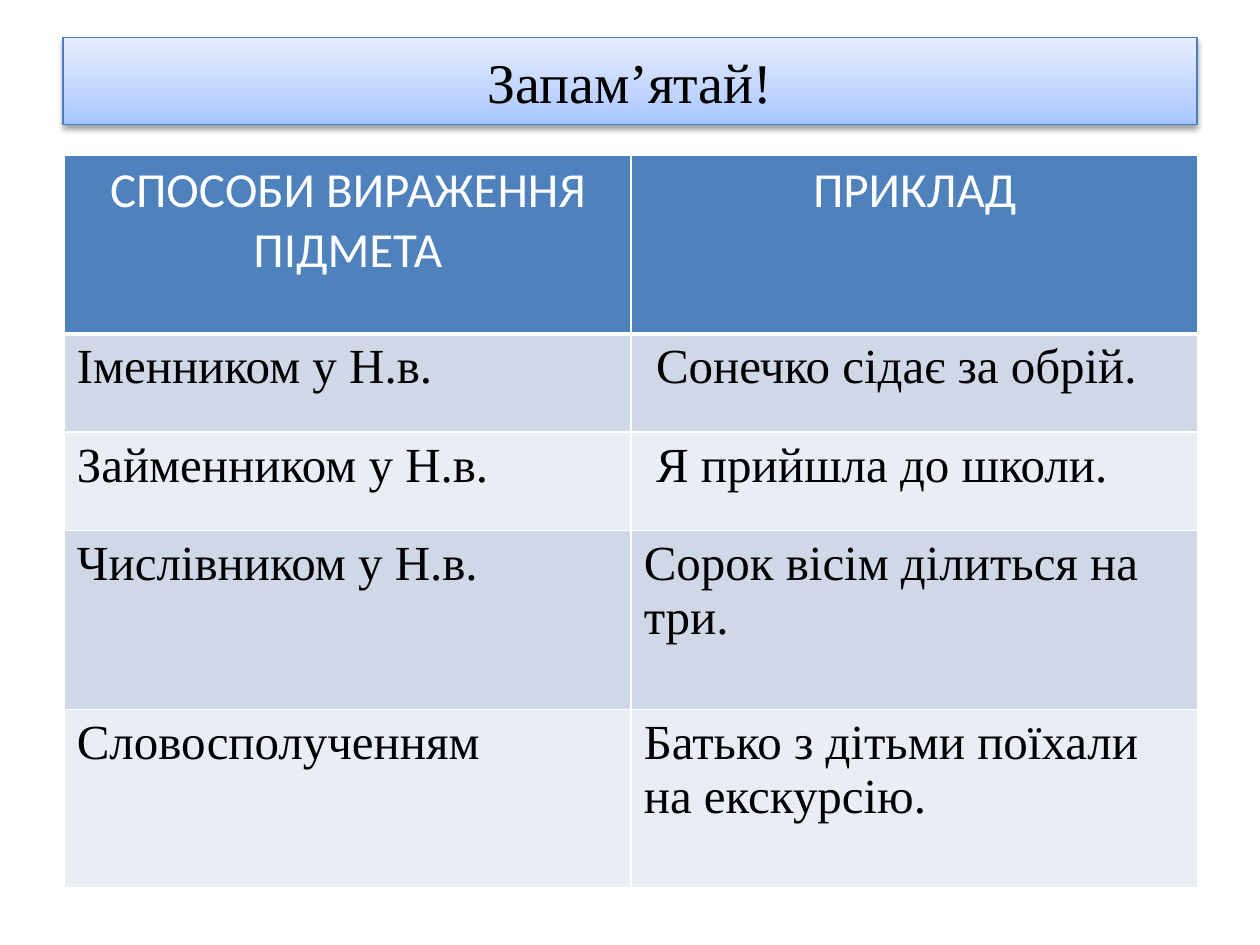
from lxml import etree
from pptx import Presentation
from pptx.dml.color import RGBColor
from pptx.enum import shapes, text
from pptx.oxml.ns import nsdecls, qn
from pptx.util import Inches, Pt

BLACK = RGBColor(0x00, 0x00, 0x00)
WHITE = RGBColor(0xFF, 0xFF, 0xFF)
OUTLINE = RGBColor(0x4B, 0x7E, 0xBC)
HEADER = RGBColor(0x4F, 0x81, 0xBD)
BANDS = RGBColor(0xD0, 0xD8, 0xE8), RGBColor(0xE9, 0xED, 0xF4)
TITLE_STOPS = (
    (0, RGBColor(0xA4, 0xC4, 0xFF)),
    (35, RGBColor(0xBF, 0xD4, 0xFF)),
    (100, RGBColor(0xE6, 0xEE, 0xFF)),
)
SERIF, SANS = "Times New Roman", "Calibri"

ROW_HEIGHTS = 1.42, 0.78, 0.78, 1.42, 1.42
ROWS = (
    ("СПОСОБИ ВИРАЖЕННЯ ПІДМЕТА", "ПРИКЛАД"),
    ("Іменником у Н.в.", " Сонечко сідає за обрій."),
    ("Займенником у Н.в.", " Я прийшла до школи."),
    ("Числівником у Н.в.", "Сорок вісім ділиться на три."),
    ("Словосполученням", "Батько з дітьми поїхали на екскурсію."),
)


def write(tf, content, size, name, color, align):
    p = tf.paragraphs[0]
    p.text = content
    p.alignment = align
    p.font.size = Pt(size)
    p.font.name = name
    p.font.color.rgb = color
    p.font.bold = False


def fill_gradient(sp, stops):
    """Fill a shape from bottom to top with (percent, colour) stops."""
    sp.fill.gradient()
    sp.fill.gradient_angle = 90
    gs_list = sp.element.spPr.find(".//" + qn("a:gsLst"))
    gs_list.clear()
    for percent, color in stops:
        gs = etree.SubElement(gs_list, qn("a:gs"), pos=str(percent * 1000))
        etree.SubElement(gs, qn("a:srgbClr"), val=str(color))


def add_drop_shadow(sp, blur, distance, opacity):
    sp.shadow.inherit = False
    effects = sp.element.spPr.find(qn("a:effectLst"))
    effects.append(etree.fromstring(
        f'<a:outerShdw {nsdecls("a")} blurRad="{Pt(blur)}" dist="{Pt(distance)}"'
        f' dir="5400000" rotWithShape="0"><a:srgbClr val="{BLACK}">'
        f'<a:alpha val="{opacity * 1000}"/></a:srgbClr></a:outerShdw>'))


def set_borders(cell, bottom):
    tc_pr = cell._tc.get_or_add_tcPr()
    for i, (side, width) in enumerate(zip("LRTB", (1, 1, 1, bottom))):
        tc_pr.insert(i, etree.fromstring(
            f'<a:ln{side} {nsdecls("a")} w="{Pt(width)}"><a:solidFill>'
            f'<a:srgbClr val="{WHITE}"/></a:solidFill></a:ln{side}>'))


def add_title(slide):
    sp = slide.shapes.add_shape(shapes.MSO_SHAPE.RECTANGLE, Inches(0.5),
                                Inches(0.3), Inches(9), Inches(0.69))
    fill_gradient(sp, TITLE_STOPS)
    sp.line.color.rgb = OUTLINE
    sp.line.width = Pt(0.75)
    add_drop_shadow(sp, blur=3.1, distance=1.6, opacity=38)
    tf = sp.text_frame
    tf.word_wrap = True
    tf.vertical_anchor = text.MSO_ANCHOR.MIDDLE
    write(tf, "Запам’ятай!", 32, SERIF, BLACK, text.PP_ALIGN.CENTER)


def add_rules_table(slide):
    table = slide.shapes.add_table(
        len(ROWS), 2, Inches(0.51), Inches(1.23),
        Inches(9), Inches(sum(ROW_HEIGHTS))).table
    for i, (row, height) in enumerate(zip(ROWS, ROW_HEIGHTS)):
        table.rows[i].height = Inches(height)
        is_header = i == 0
        for j, content in enumerate(row):
            cell = table.cell(i, j)
            cell.fill.solid()
            cell.fill.fore_color.rgb = HEADER if is_header else BANDS[(i - 1) % 2]
            set_borders(cell, bottom=3 if is_header else 1)
            if is_header:
                style = SANS, WHITE, text.PP_ALIGN.CENTER
            else:
                style = SERIF, BLACK, text.PP_ALIGN.LEFT
            write(cell.text_frame, content, 28, *style)


def main():
    prs = Presentation()
    prs.slide_width, prs.slide_height = Inches(10), Inches(7.5)
    slide = prs.slides.add_slide(prs.slide_layouts[6])
    add_title(slide)
    add_rules_table(slide)
    prs.save("out.pptx")


if __name__ == "__main__":
    main()
